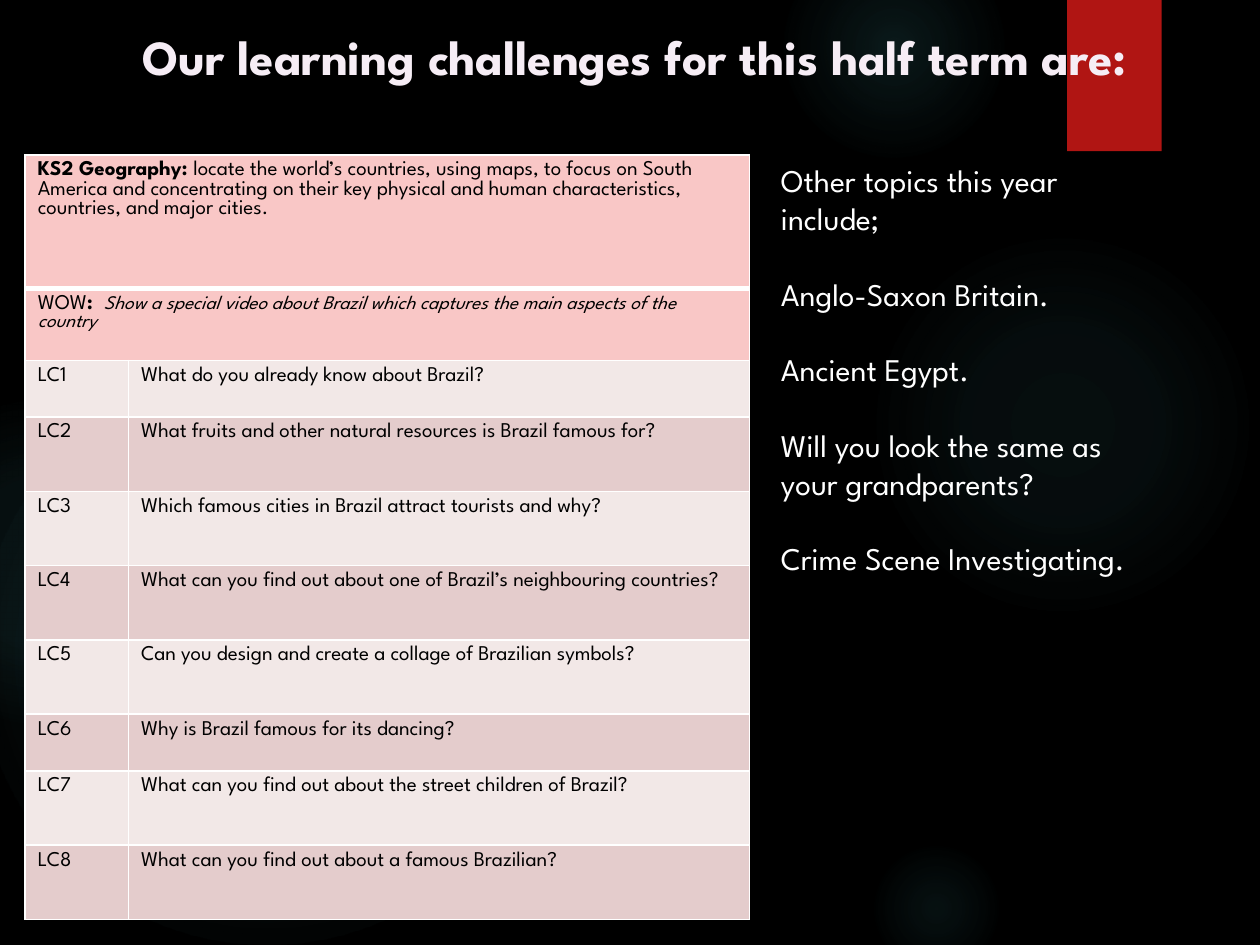
from dataclasses import dataclass

from lxml.etree import SubElement
from pptx import Presentation
from pptx.dml.color import RGBColor as Rgb
from pptx.enum.shapes import MSO_SHAPE as Shape
from pptx.enum.text import MSO_ANCHOR as Anchor, MSO_AUTO_SIZE as AutoSize, PP_ALIGN as Align
from pptx.oxml import parse_xml
from pptx.oxml.ns import nsdecls, qn
from pptx.util import Inches, Pt


@dataclass(frozen=True)
class Theme:
    """Colours, font and type sizes of the slide."""
    font: str = "League Spartan"
    background: str = "000000"
    glow: str = "50B9C1"
    ribbon: str = "B01513"
    title: str = "F6EDF5"
    title_outline: str = "8A3086"
    light: str = "FFFFFF"
    dark: str = "000000"
    heading: str = "F9C7C6"
    bands: tuple = ("F2E8E7", "E4CCCC")
    title_size: float = 28
    body_size: float = 18
    cell_size: float = 12
    note_size: float = 11


GLOWS = [
    (6.89, 1.83, 3.08, (7, 6), 69),
    (6.22, -0.5, 1.75, (14, 7), 73),
    (6.89, 6.67, 1.08, (9, 5), 66),
    (-0.17, 2.92, 4.58, (11, 10), 75),
    (-0.92, 3.17, 2.58, (8, 8), 72),
]
GEOGRAPHY = [
    ("KS2 Geography: ", {"bold": True}),
    ("locate the world’s countries, using maps, to focus on South America and concentrating on "
     "their key physical and human characteristics, countries, and major cities.", {}),
]
WOW = [
    ("WOW", {}),
    (":  ", {"bold": True}),
    ("Show a special video about Brazil which captures the main aspects of the country",
     {"italic": True, "size": Theme.note_size}),
]
CHALLENGES = [
    ("What do you already know about Brazil?", 0.45),
    ("What fruits and other natural resources is Brazil famous for?", 0.59),
    ("Which famous cities in Brazil attract tourists and why?", 0.59),
    ("What can you find out about one of Brazil’s neighbouring countries?", 0.59),
    ("Can you design and create a collage of Brazilian symbols?", 0.59),
    ("Why is Brazil famous for its dancing?", 0.45),
    ("What can you find out about the street children of Brazil?", 0.59),
    ("What can you find out about a famous Brazilian?", 0.59),
]
TOPICS = ["Other topics this year include;", "Anglo-Saxon Britain.", "Ancient Egypt.",
          "Will you look the same as your grandparents?", "Crime Scene Investigating."]


class SlideBuilder:
    """Draws styled elements on one slide, on a grid of one-inch columns and rows."""

    def __init__(self, deck, theme):
        self.theme = theme
        self.slide = deck.slides.add_slide(deck.slide_layouts[5])
        fill = self.slide.background.fill
        fill.solid()
        fill.fore_color.rgb = Rgb.from_string(theme.background)

    def style(self, run, size, color, bold=False, italic=False):
        font = run.font
        font.name, font.size, font.bold, font.italic = self.theme.font, Pt(size), bold, italic
        font.color.rgb = Rgb.from_string(color)

    def block(self, kind, *box):
        block = self.slide.shapes.add_shape(kind, *map(Inches, box))
        block.shadow.inherit = False
        block.line.fill.background()
        return block

    def glow(self, left, top, size, alphas, edge):
        disc = self.block(Shape.OVAL, left, top, size, size)
        stops = "".join(
            f'<a:gs pos="{pos * 1000}"><a:srgbClr val="{self.theme.glow}">'
            f'<a:alpha val="{alpha * 1000}"/></a:srgbClr></a:gs>'
            for pos, alpha in zip((0, 36, edge), (*alphas, 0)))
        disc.fill.background()
        empty = disc._element.spPr.find(qn("a:noFill"))
        empty.getparent().replace(empty, parse_xml(
            f'<a:gradFill {nsdecls("a")}><a:gsLst>{stops}</a:gsLst><a:path path="circle">'
            '<a:fillToRect l="50000" t="50000" r="50000" b="50000"/></a:path></a:gradFill>'))

    def ribbon(self, *box):
        ribbon = self.block(Shape.RECTANGLE, *box)
        ribbon.fill.solid()
        ribbon.fill.fore_color.rgb = Rgb.from_string(self.theme.ribbon)
        effects = ribbon._element.spPr.find(qn("a:effectLst"))
        effects.append(parse_xml(
            f'<a:outerShdw {nsdecls("a")} blurRad="38100" dist="25400" dir="5400000">'
            '<a:srgbClr val="000000"><a:alpha val="45000"/></a:srgbClr></a:outerShdw>'))

    def title(self, text, *box):
        title = self.slide.shapes.title
        title.left, title.top, title.width, title.height = map(Inches, box)
        frame = title.text_frame
        frame.text = text
        frame.auto_size, frame.vertical_anchor = AutoSize.SHAPE_TO_FIT_TEXT, Anchor.TOP
        paragraph = frame.paragraphs[0]
        paragraph.alignment = Align.CENTER
        run = paragraph.runs[0]
        self.style(run, self.theme.title_size, self.theme.title, bold=True)
        run._r.rPr.insert(0, parse_xml(
            f'<a:ln {nsdecls("a")} w="{Pt(2.48)}"><a:solidFill>'
            f'<a:srgbClr val="{self.theme.title_outline}"/></a:solidFill></a:ln>'))
        title._element.getparent().append(title._element)

    def paragraphs(self, lines, gap, *box):
        frame = self.slide.shapes.add_textbox(*map(Inches, box)).text_frame
        frame.word_wrap = True
        frame.text = "\n".join(lines)
        for paragraph in frame.paragraphs:
            paragraph.space_after = Pt(gap)
            self.style(paragraph.runs[0], self.theme.body_size, self.theme.light)

    def cell(self, cell, pieces, fill, bottom=1):
        cell.fill.solid()
        cell.fill.fore_color.rgb = Rgb.from_string(fill)
        paragraph = cell.text_frame.paragraphs[0]
        for text, look in pieces:
            run = paragraph.add_run()
            run.text = text
            self.style(run, **{"size": self.theme.cell_size, "color": self.theme.dark, **look})
        self.borders(cell, bottom)

    def borders(self, cell, bottom=1):
        properties = cell._tc.get_or_add_tcPr()
        for place, (side, width) in enumerate(zip("LRTB", (1, 1, 1, bottom))):
            line = SubElement(properties, qn(f"a:ln{side}"), w=str(Pt(width)))
            paint = SubElement(line, qn("a:solidFill"))
            SubElement(paint, qn("a:srgbClr"), val=self.theme.light)
            properties.insert(place, line)

    def challenge_table(self, headings, challenges, columns, left, top):
        heights = [height for _, height, _ in headings] + [height for _, height in challenges]
        table = self.slide.shapes.add_table(
            len(heights), len(columns),
            *map(Inches, (left, top, sum(columns), sum(heights)))).table
        for column, width in zip(table.columns, columns):
            column.width = Inches(width)
        for row, height in zip(table.rows, heights):
            row.height = Inches(height)
        for index, (pieces, _, bottom) in enumerate(headings):
            table.cell(index, 0).merge(table.cell(index, 1))
            self.cell(table.cell(index, 0), pieces, self.theme.heading, bottom)
            self.borders(table.cell(index, 1), bottom)
        for number, (question, _) in enumerate(challenges):
            row = len(headings) + number
            band = self.theme.bands[number % 2]
            for column, text in enumerate((f"LC{number + 1}", question)):
                self.cell(table.cell(row, column), [(text, {})], band)


def main():
    """Build the learning challenges slide."""
    deck = Presentation()
    deck.slide_width, deck.slide_height = Inches(10), Inches(7.5)
    builder = SlideBuilder(deck, Theme())
    for glow in GLOWS:
        builder.glow(*glow)
    builder.ribbon(8.47, 0, 0.75, 1.2)
    builder.title("Our learning challenges for this half term are:", 0.39, 0.16, 9.29, 0.57)
    builder.challenge_table([(GEOGRAPHY, 1.06, 3), (WOW, 0.57, 1)], CHALLENGES,
                            (0.82, 4.93), 0.2, 1.23)
    builder.paragraphs(TOPICS, 21.6, 6.1, 1.23, 3.07, 4.04)
    deck.save("out.pptx")


if __name__ == "__main__":
    main()
